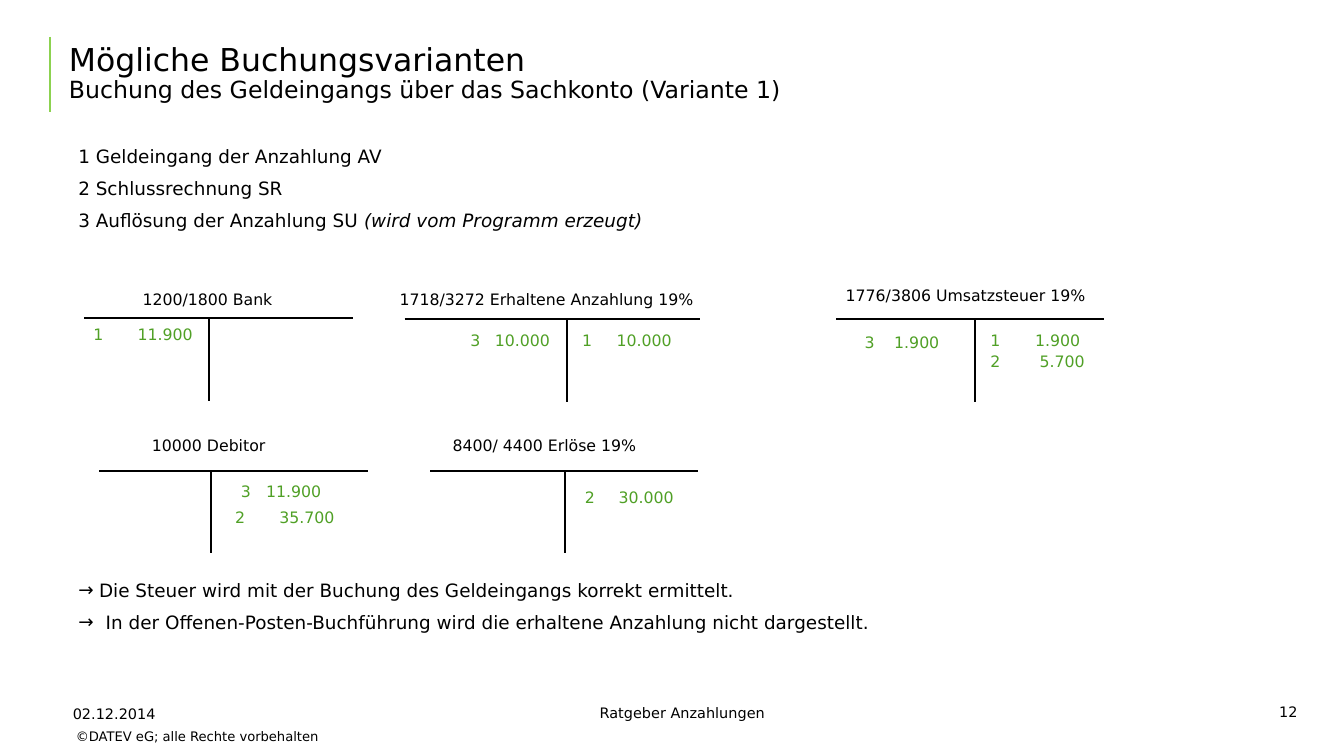
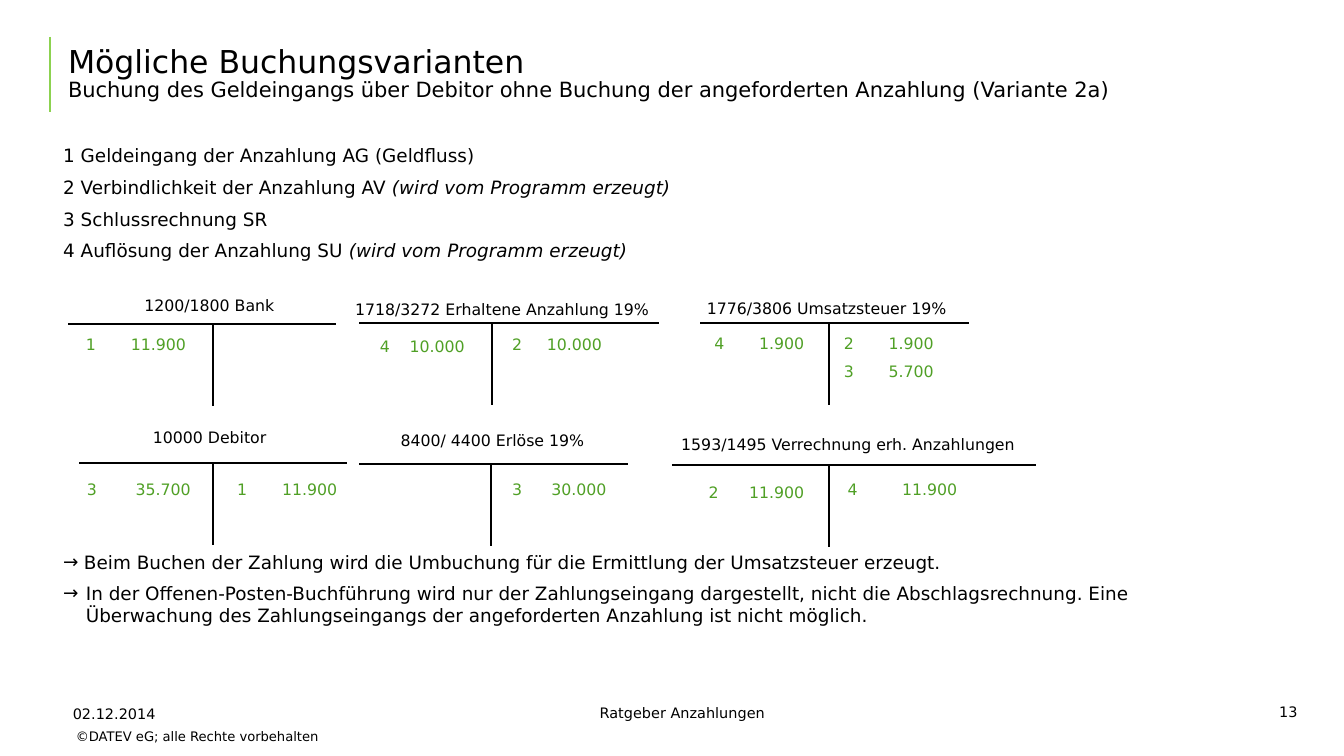
from dataclasses import dataclass
from typing import Any

import pptx
import pptx.dml.color
import pptx.enum.shapes
import pptx.enum.text
import pptx.oxml
import pptx.oxml.ns
import pptx.util
from pptx.util import Inches

BLACK = pptx.dml.color.RGBColor(0x00, 0x00, 0x00)
ACCENT_GREEN = pptx.dml.color.RGBColor(0x8C, 0xD2, 0x50)
ENTRY_GREEN = pptx.dml.color.RGBColor(0x50, 0xA0, 0x26)
FONT_NAME = "DejaVu Sans"
ALIGN = pptx.enum.text.PP_ALIGN
ANCHOR = pptx.enum.text.MSO_ANCHOR
STEM_HEIGHT = 0.87
LIST_GAP = pptx.util.Pt(7.3)
GENERATED = "(wird vom Programm erzeugt)"


@dataclass(frozen=True)
class Entry:
    step: str
    amount: str
    left: float
    right: float
    top: float


@dataclass(frozen=True)
class Account:
    name: str
    name_left: float
    name_top: float
    left: float
    right: float
    top: float
    stem: float
    entries: tuple[Entry, ...]


@dataclass(frozen=True)
class Step:
    text: str
    remark: str = ""


@dataclass(frozen=True)
class Conclusion:
    text: str
    indent: float


@dataclass(frozen=True)
class Footer:
    text: str
    left: float
    top: float
    width: float
    height: float
    size: int
    alignment: Any
    margins: tuple[float, float, float, float]


@dataclass(frozen=True)
class Variant:
    number: str
    subtitle: str
    subtitle_size: int
    title_left: float
    title_width: float
    body_left: float
    steps_top: float
    conclusions_top: float
    steps: tuple[Step, ...]
    conclusions: tuple[Conclusion, ...]
    accounts: tuple[Account, ...]


TEXT_MARGINS = (0.1, 0.05, 0.1, 0.05)
FOOTER_MARGINS = (0.13, 0.06, 0.13, 0.06)
TITLE_MARGINS = (0, 0, 0.13, 0)

FOOTERS = (
    Footer("©DATEV eG; alle Rechte vorbehalten", 0.64, 7.66, 2.89, 0.3, 10, ALIGN.CENTER, TEXT_MARGINS),
    Footer("02.12.2014", 0.64, 7.4, 3.32, 0.29, 11, ALIGN.LEFT, FOOTER_MARGINS),
    Footer("Ratgeber Anzahlungen", 4.97, 7.39, 4.5, 0.3, 11, ALIGN.CENTER, FOOTER_MARGINS),
)

VARIANTS = (
    Variant(
        "12", "Buchung des Geldeingangs über das Sachkonto (Variante 1)", 18,
        0.73, 10.97, 0.73, 1.49, 6.08,
        (
            Step("1 Geldeingang der Anzahlung AV"),
            Step("2 Schlussrechnung SR"),
            Step("3 Auflösung der Anzahlung SU ", GENERATED),
        ),
        (
            Conclusion("Die Steuer wird mit der Buchung des Geldeingangs korrekt ermittelt.", 0.22),
            Conclusion("In der Offenen-Posten-Buchführung wird die erhaltene Anzahlung nicht dargestellt.", 0.29),
        ),
        (
            Account("1200/1800 Bank", 1.41, 3.02, 0.89, 3.73, 3.37, 2.21, (
                Entry("1", "11.900", 0.89, 2.04, 3.41),
            )),
            Account("1718/3272 Erhaltene Anzahlung 19%", 4.13, 3.02, 4.28, 7.41, 3.38, 6, (
                Entry("3", "10.000", 4.88, 5.82, 3.47),
                Entry("1", "10.000", 6.06, 7.11, 3.47),
            )),
            Account("1776/3806 Umsatzsteuer 19%", 8.85, 2.98, 8.85, 11.68, 3.38, 10.32, (
                Entry("3", "1.900", 9.05, 9.94, 3.49),
                Entry("1", "1.900", 10.38, 11.43, 3.47),
                Entry("2", "5.700", 10.38, 11.48, 3.7),
            )),
            Account("10000 Debitor", 1.51, 4.56, 1.05, 3.89, 4.98, 2.23, (
                Entry("3", "11.900", 2.45, 3.4, 5.07),
                Entry("2", "35.700", 2.39, 3.54, 5.35),
            )),
            Account("8400/ 4400 Erlöse 19%", 4.69, 4.56, 4.55, 7.38, 4.98, 5.98, (
                Entry("2", "30.000", 6.09, 7.13, 5.13),
            )),
        ),
    ),
    Variant(
        "13", "Buchung des Geldeingangs über Debitor ohne Buchung der angeforderten Anzahlung (Variante 2a)", 16,
        0.72, 12.21, 0.57, 1.48, 5.78,
        (
            Step("1 Geldeingang der Anzahlung AG (Geldfluss)"),
            Step("2 Verbindlichkeit der Anzahlung AV ", GENERATED),
            Step("3 Schlussrechnung SR"),
            Step("4 Auflösung der Anzahlung SU ", GENERATED),
        ),
        (
            Conclusion("Beim Buchen der Zahlung wird die Umbuchung für die Ermittlung der Umsatzsteuer erzeugt.", 0.22),
            Conclusion("In der Offenen-Posten-Buchführung wird nur der Zahlungseingang dargestellt, nicht die "
                       "Abschlagsrechnung. Eine Überwachung des Zahlungseingangs der angeforderten Anzahlung "
                       "ist nicht möglich.", 0.24),
        ),
        (
            Account("1200/1800 Bank", 1.43, 3.08, 0.72, 3.55, 3.43, 2.25, (
                Entry("1", "11.900", 0.81, 1.97, 3.52),
            )),
            Account("1718/3272 Erhaltene Anzahlung 19%", 3.66, 3.12, 3.8, 6.97, 3.42, 5.21, (
                Entry("4", "10.000", 3.92, 4.92, 3.54),
                Entry("2", "10.000", 5.32, 6.37, 3.52),
            )),
            Account("1776/3806 Umsatzsteuer 19%", 7.38, 3.11, 7.41, 10.25, 3.42, 8.77, (
                Entry("4", "1.900", 7.46, 8.51, 3.5),
                Entry("2", "1.900", 8.83, 9.88, 3.5),
                Entry("3", "5.700", 8.83, 9.88, 3.8),
            )),
            Account("10000 Debitor", 1.52, 4.48, 0.84, 3.67, 4.9, 2.25, (
                Entry("3", "35.700", 0.82, 2.02, 5.05),
                Entry("1", "11.900", 2.41, 3.57, 5.05),
            )),
            Account("8400/ 4400 Erlöse 19%", 4.14, 4.51, 3.8, 6.64, 4.91, 5.2, (
                Entry("3", "30.000", 5.32, 6.42, 5.05),
            )),
            Account("1593/1495 Verrechnung erh. Anzahlungen", 7.11, 4.55, 7.11, 10.96, 4.92, 8.77, (
                Entry("2", "11.900", 7.4, 8.51, 5.08),
                Entry("4", "11.900", 8.87, 10.13, 5.05),
            )),
        ),
    ),
)


def apply_format(target: Any, values: dict[str, Any]) -> None:
    for name, value in values.items():
        setattr(target, name, value)


def add_run(paragraph: Any, text: str, size: int, color: Any = BLACK, italic: bool = False) -> None:
    run = paragraph.add_run()
    run.text = text
    apply_format(run.font, {"name": FONT_NAME, "size": pptx.util.Pt(size), "italic": italic})
    run.font.color.rgb = color


def add_text_frame(slide: Any, left: float, top: float, width: float, height: float,
                   margins: tuple[float, float, float, float] = TEXT_MARGINS,
                   anchor: Any = ANCHOR.TOP) -> Any:
    shape = slide.shapes.add_textbox(Inches(left), Inches(top), Inches(width), Inches(height))
    sides = ("margin_left", "margin_top", "margin_right", "margin_bottom")
    apply_format(shape.text_frame, {
        "word_wrap": True, "vertical_anchor": anchor,
        **{side: Inches(margin) for side, margin in zip(sides, margins)},
    })
    return shape.text_frame


def add_line(slide: Any, start: tuple[float, float], end: tuple[float, float], color: Any = BLACK) -> None:
    points = [Inches(value) for value in start + end]
    connector = slide.shapes.add_connector(pptx.enum.shapes.MSO_CONNECTOR.STRAIGHT, *points)
    connector.line.color.rgb = color
    connector.line.width = pptx.util.Pt(1.5)
    pptx.oxml.ns.qn("a:effectLst")
    add_element(connector._element.spPr, "effectLst")


def add_element(parent: Any, tag: str, content: str = "") -> None:
    namespace = pptx.oxml.ns.nsdecls("a")
    name = tag.split()[0]
    parent.append(pptx.oxml.parse_xml(f"<a:{tag} {namespace}>{content}</a:{name}>"))


def list_paragraph(text_frame: Any, index: int) -> Any:
    if index == 0:
        return text_frame.paragraphs[0]
    paragraph = text_frame.add_paragraph()
    paragraph.space_before = LIST_GAP
    return paragraph


def add_title(slide: Any, variant: Variant) -> None:
    text_frame = add_text_frame(slide, variant.title_left, 0.28, variant.title_width, 1.01,
                                TITLE_MARGINS, ANCHOR.MIDDLE)
    paragraph = text_frame.paragraphs[0]
    paragraph.line_spacing = 0.9
    add_run(paragraph, "Mögliche Buchungsvarianten", 24)
    paragraph.add_line_break()
    add_run(paragraph, variant.subtitle, variant.subtitle_size)


def add_footer(slide: Any, footer: Footer) -> None:
    text_frame = add_text_frame(slide, footer.left, footer.top, footer.width, footer.height, footer.margins)
    paragraph = text_frame.paragraphs[0]
    paragraph.alignment = footer.alignment
    add_run(paragraph, footer.text, footer.size)


def add_steps(slide: Any, variant: Variant) -> None:
    text_frame = add_text_frame(slide, variant.body_left, variant.steps_top, 12.1, 0.33 * len(variant.steps))
    for index, step in enumerate(variant.steps):
        paragraph = list_paragraph(text_frame, index)
        add_run(paragraph, step.text, 14)
        if step.remark:
            add_run(paragraph, step.remark, 14, italic=True)


def add_conclusions(slide: Any, variant: Variant) -> None:
    text_frame = add_text_frame(slide, variant.body_left, variant.conclusions_top, 12.1, 0.9)
    for index, conclusion in enumerate(variant.conclusions):
        paragraph = list_paragraph(text_frame, index)
        properties = paragraph._p.get_or_add_pPr()
        properties.set("marL", str(Inches(conclusion.indent)))
        properties.set("indent", str(-Inches(conclusion.indent)))
        add_element(properties, f'buFont typeface="{FONT_NAME}"')
        add_element(properties, 'buChar char="→"')
        add_run(paragraph, conclusion.text, 14)


def add_entry(slide: Any, entry: Entry) -> None:
    text_frame = add_text_frame(slide, entry.left, entry.top, entry.right - entry.left + 0.2, 0.28)
    paragraph = text_frame.paragraphs[0]
    paragraph.line_spacing = 0.9
    position = Inches(entry.right - entry.left - 0.1)
    add_element(paragraph._p.get_or_add_pPr(), "tabLst", f'<a:tab pos="{position}" algn="r"/>')
    add_run(paragraph, f"{entry.step}\t{entry.amount}", 12, ENTRY_GREEN)


def add_account(slide: Any, account: Account) -> None:
    add_line(slide, (account.left, account.top), (account.right, account.top))
    add_line(slide, (account.stem, account.top), (account.stem, account.top + STEM_HEIGHT))
    width = 0.4 + 0.1 * len(account.name)
    text_frame = add_text_frame(slide, account.name_left, account.name_top, width, 0.3)
    add_run(text_frame.paragraphs[0], account.name, 12)
    for entry in account.entries:
        add_entry(slide, entry)


def build_slide(presentation: Any, variant: Variant) -> None:
    slide = presentation.slides.add_slide(presentation.slide_layouts[6])
    add_line(slide, (0.53, 0.39), (0.53, 1.18), ACCENT_GREEN)
    add_title(slide, variant)
    add_steps(slide, variant)
    for account in variant.accounts:
        add_account(slide, account)
    add_conclusions(slide, variant)
    page_number = Footer(variant.number, 13.06, 7.38, 0.8, 0.31, 11, ALIGN.RIGHT, FOOTER_MARGINS)
    for footer in (*FOOTERS, page_number):
        add_footer(slide, footer)


def main() -> None:
    presentation = pptx.Presentation()
    apply_format(presentation, {"slide_width": Inches(14.22), "slide_height": Inches(8)})
    for variant in VARIANTS:
        build_slide(presentation, variant)
    presentation.save("out.pptx")


if __name__ == "__main__":
    main()
